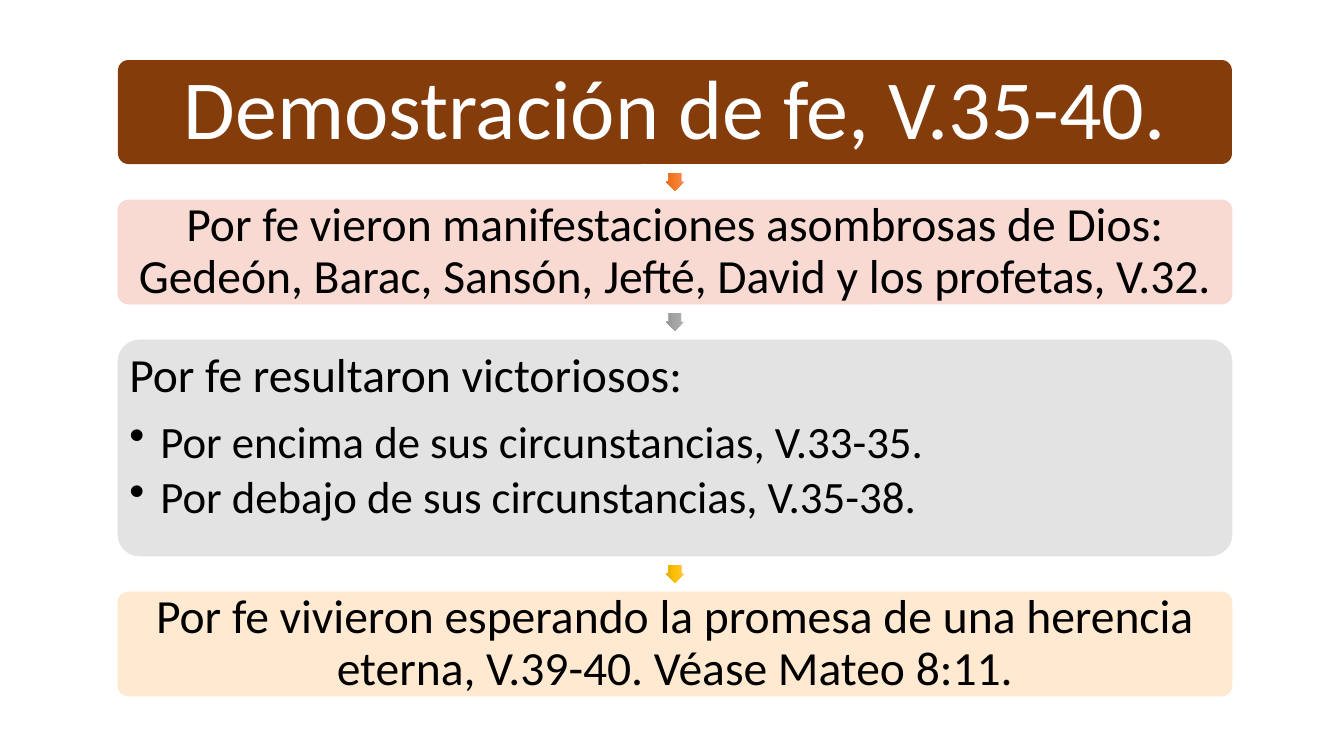
import dataclasses

import lxml.etree
import pptx
import pptx.dml.color
import pptx.enum.shapes
import pptx.enum.text
import pptx.oxml
import pptx.oxml.ns
import pptx.util

SCALE = 12700 * 72 / 100.8  # EMU in one px
SLIDE_WIDTH, SLIDE_HEIGHT = 1344, 756
LEFT, WIDTH, TOP, GAP = 118, 1114, 60, 36
ARROW_SIZE = 18
BULLET_INDENT = 31
FONT = "Calibri"

COLORS = {
    "title": "843C0B",
    "white": "FFFFFF",
    "black": "000000",
    "wonders": "F8D7CE",
    "victory": "E1E1E1",
    "promise": "FFE8CC",
}


@dataclasses.dataclass(frozen=True)
class Card:
    color: str
    height: int
    text: str
    points: tuple[str, ...] = ()
    arrow: tuple[str, str, str] = ("", "", "")


CARDS = [
    Card("wonders", 104,
         "Por fe vieron manifestaciones asombrosas de Dios: "
         "Gedeón, Barac, Sansón, Jefté, David y los profetas, V.32.",
         arrow=("F18C57", "F67B28", "E56C19")),
    Card("victory", 216, "Por fe resultaron victoriosos:",
         ("Por encima de sus circunstancias, V.33-35.",
          "Por debajo de sus circunstancias, V.35-38."),
         arrow=("AFAFAF", "A5A5A5", "939393")),
    Card("promise", 104,
         "Por fe vivieron esperando la promesa de una herencia "
         "eterna, V.39-40. Véase Mateo 8:11.",
         arrow=("FFC64B", "FFC000", "E3AB00")),
]


def px(length: float) -> pptx.util.Emu:
    return pptx.util.Emu(round(length * SCALE))


def rgb(name: str) -> pptx.dml.color.RGBColor:
    return pptx.dml.color.RGBColor.from_string(COLORS[name])


def add_panel(slide, top: int, height: int, color: str):
    panel = slide.shapes.add_shape(
        pptx.enum.shapes.MSO_SHAPE.ROUNDED_RECTANGLE,
        px(LEFT), px(top), px(WIDTH), px(height))
    panel.adjustments[0] = 0.1
    panel.shadow.inherit = False
    panel.fill.solid()
    panel.fill.fore_color.rgb = rgb(color)
    panel.line.fill.background()
    return panel


def set_frame(frame, margin: int, anchor) -> None:
    frame.word_wrap = True
    frame.auto_size = pptx.enum.text.MSO_AUTO_SIZE.NONE
    frame.vertical_anchor = anchor
    frame.margin_left = frame.margin_right = px(margin)
    frame.margin_top = frame.margin_bottom = px(margin)


def format_paragraph(paragraph, size: int, color: str, alignment) -> None:
    paragraph.alignment = alignment
    paragraph.line_spacing = 0.9
    paragraph.font.size = pptx.util.Pt(size)
    paragraph.font.name = FONT
    paragraph.font.color.rgb = rgb(color)


def add_bullet(paragraph) -> None:
    properties = paragraph._p.get_or_add_pPr()
    properties.set("marL", str(px(BULLET_INDENT)))
    properties.set("indent", str(-px(BULLET_INDENT)))
    bullet = lxml.etree.SubElement(properties, pptx.oxml.ns.qn("a:buChar"))
    bullet.set("char", "•")


def add_arrow(slide, top: int, colors: tuple[str, str, str]) -> None:
    arrow = slide.shapes.add_shape(
        pptx.enum.shapes.MSO_SHAPE.RIGHT_ARROW,
        px(LEFT + (WIDTH - ARROW_SIZE) / 2), px(top + (GAP - ARROW_SIZE) / 2),
        px(ARROW_SIZE), px(ARROW_SIZE))
    arrow.rotation = 90
    arrow.adjustments[0] = 0.67
    arrow.shadow.inherit = False
    arrow.line.fill.background()
    # Three-stop gradient
    stops = "".join(
        f'<a:gs pos="{index * 50000}"><a:srgbClr val="{color}"/></a:gs>'
        for index, color in enumerate(colors))
    gradient = pptx.oxml.parse_xml(
        f'<a:gradFill {pptx.oxml.ns.nsdecls("a")} rotWithShape="1">'
        f'<a:gsLst>{stops}</a:gsLst><a:lin ang="5400000" scaled="0"/></a:gradFill>')
    arrow._element.spPr.find(pptx.oxml.ns.qn("a:prstGeom")).addnext(gradient)


def add_card(slide, top: int, card: Card) -> None:
    panel = add_panel(slide, top, card.height, card.color)
    panel.line.color.rgb = rgb(card.color)
    panel.line.width = pptx.util.Pt(0.5)
    # Fill and outline are 90% opaque
    for color in panel._element.spPr.iter(pptx.oxml.ns.qn("a:srgbClr")):
        lxml.etree.SubElement(color, pptx.oxml.ns.qn("a:alpha")).set("val", "90000")

    align, anchor = pptx.enum.text.PP_ALIGN, pptx.enum.text.MSO_ANCHOR
    frame = panel.text_frame
    set_frame(frame, 5, anchor.TOP if card.points else anchor.MIDDLE)
    statement = frame.paragraphs[0]
    statement.text = card.text
    format_paragraph(statement, 34, "black",
                     align.LEFT if card.points else align.CENTER)
    if card.points:
        statement.space_after = pptx.util.Pt(12)
    for text in card.points:
        point = frame.add_paragraph()
        point.text = text
        add_bullet(point)
        format_paragraph(point, 32, "black", align.LEFT)
        point.space_after = pptx.util.Pt(5)


def add_title(slide, height: int) -> None:
    panel = add_panel(slide, TOP, height, "title")
    title = slide.shapes.title
    title._element.addprevious(panel._element)
    title.left, title.top = px(LEFT), px(TOP)
    title.width, title.height = px(WIDTH), px(height)
    title.text = "Demostración de fe, V.35-40."
    set_frame(title.text_frame, 11, pptx.enum.text.MSO_ANCHOR.MIDDLE)
    format_paragraph(title.text_frame.paragraphs[0], 60, "white",
                     pptx.enum.text.PP_ALIGN.CENTER)


def main() -> None:
    presentation = pptx.Presentation()
    presentation.slide_width = px(SLIDE_WIDTH)
    presentation.slide_height = px(SLIDE_HEIGHT)
    slide = presentation.slides.add_slide(presentation.slide_layouts[5])

    # Heading
    title_height = 104
    add_title(slide, title_height)

    # Chain of arrows and cards
    bottom = TOP + title_height
    for card in CARDS:
        add_arrow(slide, bottom, card.arrow)
        add_card(slide, bottom + GAP, card)
        bottom += GAP + card.height

    presentation.save("out.pptx")


if __name__ == "__main__":
    main()
